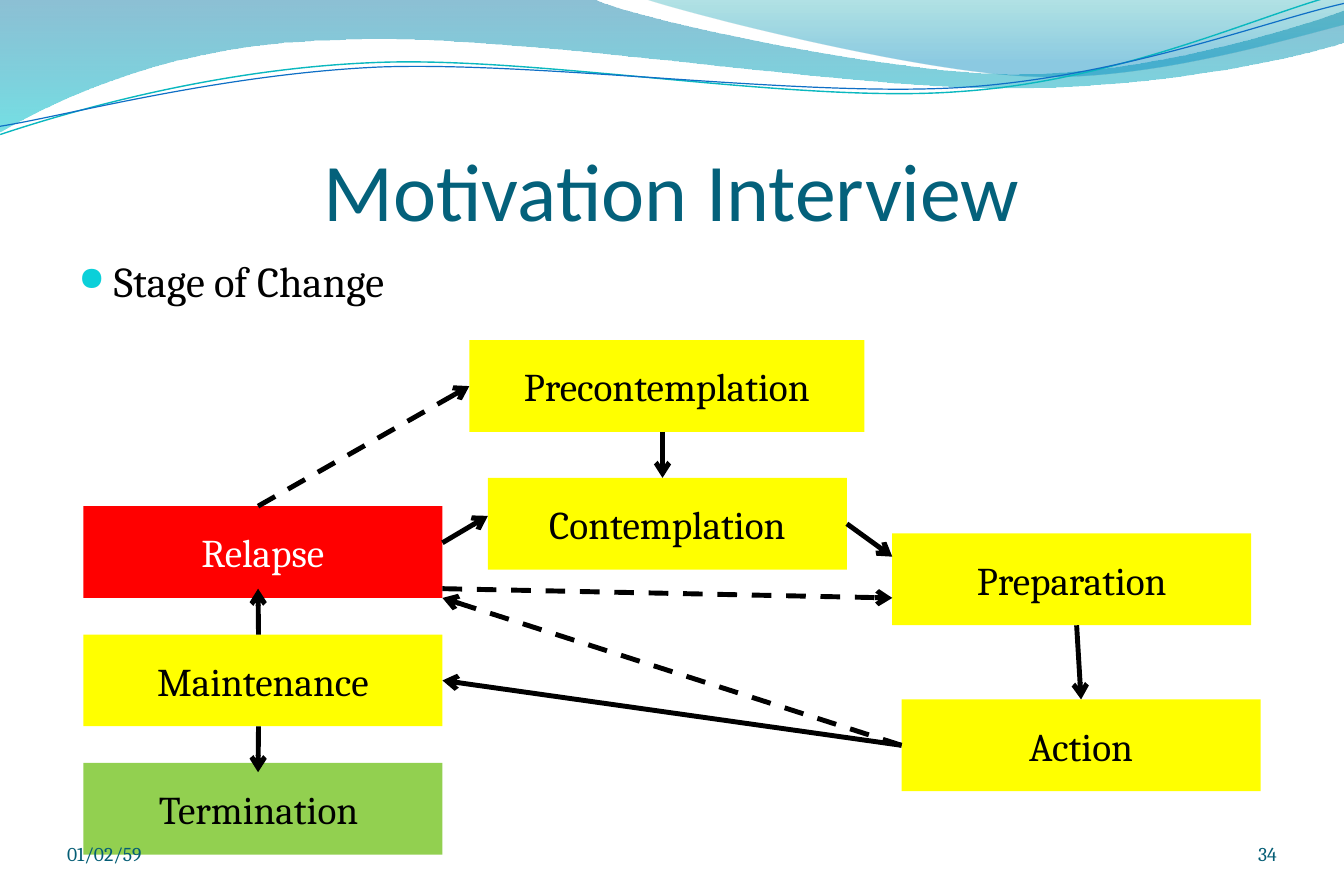
"""Build the Motivation Interview slide showing the stages of change."""
from dataclasses import dataclass
from typing import Any, NamedTuple, Optional, Union

from lxml import etree
from pptx import Presentation
from pptx.dml.color import RGBColor
from pptx.enum.dml import MSO_LINE
from pptx.enum.shapes import MSO_CONNECTOR, MSO_SHAPE
from pptx.enum.text import MSO_ANCHOR, PP_ALIGN
from pptx.oxml.ns import qn
from pptx.util import Cm, Pt

LEFT, CENTER, RIGHT = PP_ALIGN.LEFT, PP_ALIGN.CENTER, PP_ALIGN.RIGHT
ANCHOR_TOP, ANCHOR_MIDDLE, ANCHOR_BOTTOM = MSO_ANCHOR.TOP, MSO_ANCHOR.MIDDLE, MSO_ANCHOR.BOTTOM
RECTANGLE, STRAIGHT, DASH = MSO_SHAPE.RECTANGLE, MSO_CONNECTOR.STRAIGHT, MSO_LINE.DASH
SIDE_TOP, SIDE_LEFT, SIDE_BOTTOM, SIDE_RIGHT = range(4)

COLORS = {
    "black": "000000", "white": "FFFFFF", "yellow": "FFFF00", "red": "FF0000",
    "green": "92D050", "title": "04617B", "footer": "045D75", "bullet": "0BD0D9",
    "wave blue": "0074A1", "wave cyan": "00C6CF", "crest teal": "00A1A9",
    "crest blue": "008BBF", "teal line": "0AB8BF", "blue line": "0F6FC6",
}
SLIDE_WIDTH, SLIDE_HEIGHT = 29.01, 19.05
MARGIN, CONTENT_WIDTH = 1.45, 26.11
STAGE_WIDTH, STAGE_HEIGHT = 7.75, 1.98
COLUMN_LEFT, COLUMN_TOP, COLUMN_STEP = 1.8, 10.92, 2.77
COLUMN_RIGHT = COLUMN_LEFT + STAGE_WIDTH
LINE_TILT = 357.3

Point = tuple[float, float]


class Stop(NamedTuple):
    position: float
    color: str
    opacity: int


class Side(NamedTuple):
    stage: str
    site: int


@dataclass
class Wave:
    start: Point
    segments: list[tuple[Point, ...]]
    stops: tuple[Stop, ...] = ()
    line_color: str = ""
    line_width: float = 0


@dataclass
class Label:
    text: str
    box: tuple[float, float, float, float]
    size: int
    color: str
    font: str = "Cambria"
    align: Any = LEFT
    anchor: Any = ANCHOR_BOTTOM
    margins: Optional[tuple[float, float]] = (0, 0)
    bulleted: bool = False


@dataclass
class Stage:
    text: str
    left: float
    top: float
    fill: str = "yellow"
    color: str = "black"
    width: float = STAGE_WIDTH


@dataclass
class Arrow:
    begin: Union[Point, Side]
    end: Union[Point, Side]
    dashed: bool = False


WAVES = [
    Wave((0, 0), [((12.78, -0.03),), ((13.79, 0.43), (19.25, 1.6), (22, 1.6)),
                  ((24.74, 1.6), (27.79, 0.66), (29.01, 0.23)), ((29.03, 0.91),),
                  ((28.52, 1.12), (25.22, 1.93), (21.64, 1.91)),
                  ((18.03, 1.91), (11.07, 0.71), (7.47, 0.86)),
                  ((3.73, 0.91), (1.32, 2.11), (-0.03, 2.87)), ((0, 0),)],
         stops=(Stop(0, "wave blue", 45), Stop(1, "wave cyan", 55))),
    Wave((13.89, -0.03), [((14.78, 0.28), (19.79, 1.57), (22.3, 1.65)),
                          ((24.82, 1.75), (27.89, 0.81), (29.01, 0.53)),
                          ((29.01, 0),), ((13.89, -0.03),)],
         stops=(Stop(0, "crest teal", 30), Stop(0.8, "crest blue", 45))),
    Wave((-0.05, 2.22), [((1.37, 1.82), (4.58, 1.03), (8.04, 1.05)),
                         ((11.5, 1.05), (17.13, 2.37), (20.65, 2.27)),
                         ((24.14, 2.21), (27.27, 0.9), (28.99, 0.55))],
         line_color="teal line", line_width=0.85),
    Wave((-0.04, 2.04), [((1.34, 1.89), (4.76, 1.14), (8.21, 1.15)),
                         ((11.69, 1.19), (17.29, 2.24), (20.76, 2.18)),
                         ((24.24, 2.11), (27.34, 1.06), (29.06, 0.76))],
         line_color="blue line", line_width=0.75),
]
HEADINGS = [
    Label("Motivation Interview", (MARGIN, 1.96, CONTENT_WIDTH, 3.18), 50, "title",
          font="Calibri", align=CENTER, margins=(0.13, 0)),
    Label("Stage of Change", (MARGIN, 5.38, CONTENT_WIDTH, 12.19), 26, "black",
          anchor=ANCHOR_TOP, margins=None, bulleted=True),
]
STAGES = [
    Stage("Precontemplation", 10.13, 7.34, width=8.53),
    Stage("Preparation", 19.26, 11.51),
    Stage("Action", 19.46, 15.09),
    Stage("Relapse", COLUMN_LEFT, COLUMN_TOP, "red", "white"),
    Stage("Maintenance", COLUMN_LEFT, COLUMN_TOP + COLUMN_STEP),
    Stage("Termination ", COLUMN_LEFT, COLUMN_TOP + 2 * COLUMN_STEP, "green"),
    Stage("Contemplation", 10.53, 10.31),
]
ARROWS = [
    Arrow((14.3, 9.32), (14.3, 10.31)),
    Arrow(Side("Contemplation", SIDE_RIGHT), (19.26, 12.01)),
    Arrow((5.58, 15.67), (5.57, 16.66)),
    Arrow((23.24, 13.49), Side("Action", SIDE_TOP)),
    Arrow((5.58, 13.69), (5.57, 12.7)),
    Arrow((COLUMN_RIGHT, 11.71), (10.53, 11.13)),
    Arrow(Side("Action", SIDE_LEFT), Side("Maintenance", SIDE_RIGHT)),
    Arrow((5.57, COLUMN_TOP), Side("Precontemplation", SIDE_LEFT), dashed=True),
    Arrow((COLUMN_RIGHT, 12.7), (19.26, 12.9), dashed=True),
    Arrow(Side("Action", SIDE_LEFT), (COLUMN_RIGHT, 12.9), dashed=True),
]
FOOTERS = [
    Label("01/02/59", (MARGIN, 17.65, 6.76, 1.02), 12, "footer"),
    Label("34", (25.15, 17.65, 2.41, 1.02), 12, "footer", align=RIGHT),
]


def rgb(name: str) -> RGBColor:
    return RGBColor.from_string(COLORS[name])


def apply(target: Any, values: dict[str, Any]) -> None:
    for attribute, value in values.items():
        setattr(target, attribute, value)


def write(frame: Any, text: str, font: str, size: int, color: str, align: Any, anchor: Any) -> Any:
    apply(frame, {"word_wrap": True, "vertical_anchor": anchor})
    paragraph = frame.paragraphs[0]
    paragraph.alignment = align
    run = paragraph.add_run()
    run.text = text
    apply(run.font, {"name": font, "size": Pt(size)})
    run.font.color.rgb = rgb(color)
    return paragraph


def outline(shapes: Any, wave: Wave) -> Any:
    builder = shapes.build_freeform(*map(Cm, wave.start))
    corners = [tuple(map(Cm, segment[-1])) for segment in wave.segments]
    builder.add_line_segments(corners, close=bool(wave.stops))
    shape = builder.convert_to_shape()
    sides = list(shape._element.iter(qn("a:lnTo")))
    for side, segment in zip(sides, wave.segments):
        if len(segment) == 3:
            curve = etree.Element(qn("a:cubicBezTo"))
            for x, y in segment:
                etree.SubElement(curve, qn("a:pt"), x=str(Cm(x) - shape.left), y=str(Cm(y) - shape.top))
            side.getparent().replace(side, curve)
    return shape


def draw_wave(shapes: Any, wave: Wave) -> None:
    shape = outline(shapes, wave)
    shape.shadow.inherit = False
    if not wave.stops:
        shape.rotation = LINE_TILT
        shape.fill.background()
        shape.line.color.rgb = rgb(wave.line_color)
        shape.line.width = Pt(wave.line_width)
        return
    shape.line.fill.background()
    shape.fill.gradient()
    shape.fill.gradient_angle = 270
    for stop, gradient_stop in zip(wave.stops, shape.fill.gradient_stops):
        gradient_stop.position = stop.position
        gradient_stop.color.rgb = rgb(stop.color)
    for stop, color in zip(wave.stops, shape._element.spPr.iter(qn("a:srgbClr"))):
        etree.SubElement(color, qn("a:alpha"), val=str(stop.opacity * 1000))


def draw_label(shapes: Any, label: Label) -> None:
    frame = shapes.add_textbox(*map(Cm, label.box)).text_frame
    if label.margins:
        top, bottom = map(Cm, label.margins)
        apply(frame, {"margin_left": 0, "margin_right": 0, "margin_top": top, "margin_bottom": bottom})
    paragraph = write(frame, label.text, label.font, label.size, label.color, label.align, label.anchor)
    if label.bulleted:
        paragraph.space_before = Pt(5)
        properties = paragraph._p.get_or_add_pPr()
        properties.attrib.update({"marL": str(Cm(0.76)), "indent": str(-Cm(0.76))})
        color = etree.SubElement(properties, qn("a:buClr"))
        etree.SubElement(color, qn("a:srgbClr"), val=COLORS["bullet"])
        etree.SubElement(properties, qn("a:buSzPct"), val="78000")
        etree.SubElement(properties, qn("a:buChar"), char="●")


def draw_stage(shapes: Any, stage: Stage) -> Any:
    box = map(Cm, (stage.left, stage.top, stage.width, STAGE_HEIGHT))
    shape = shapes.add_shape(RECTANGLE, *box)
    shape.shadow.inherit = False
    shape.fill.solid()
    shape.fill.fore_color.rgb = rgb(stage.fill)
    shape.line.fill.background()
    write(shape.text_frame, stage.text, "Cambria", 24, stage.color, CENTER, ANCHOR_MIDDLE)
    return shape


def draw_arrow(shapes: Any, arrow: Arrow, boxes: dict[str, Any]) -> None:
    ends = [(0, 0) if isinstance(end, Side) else end for end in (arrow.begin, arrow.end)]
    connector = shapes.add_connector(STRAIGHT, *(Cm(value) for end in ends for value in end))
    for end, join in ((arrow.begin, connector.begin_connect), (arrow.end, connector.end_connect)):
        if isinstance(end, Side):
            join(boxes[end.stage], end.site)
    connector.line.color.rgb = rgb("black")
    connector.line.width = Pt(3)
    if arrow.dashed:
        connector.line.dash_style = DASH
    properties = connector._element.spPr
    etree.SubElement(properties.find(qn("a:ln")), qn("a:tailEnd"), type="arrow")
    etree.SubElement(properties, qn("a:effectLst"))


def main() -> None:
    deck = Presentation()
    apply(deck, {"slide_width": Cm(SLIDE_WIDTH), "slide_height": Cm(SLIDE_HEIGHT)})
    shapes = deck.slides.add_slide(deck.slide_layouts[6]).shapes
    for wave in WAVES:
        draw_wave(shapes, wave)
    for heading in HEADINGS:
        draw_label(shapes, heading)
    boxes = {stage.text: draw_stage(shapes, stage) for stage in STAGES}
    for arrow in ARROWS:
        draw_arrow(shapes, arrow, boxes)
    for footer in FOOTERS:
        draw_label(shapes, footer)
    deck.save("out.pptx")


if __name__ == "__main__":
    main()
